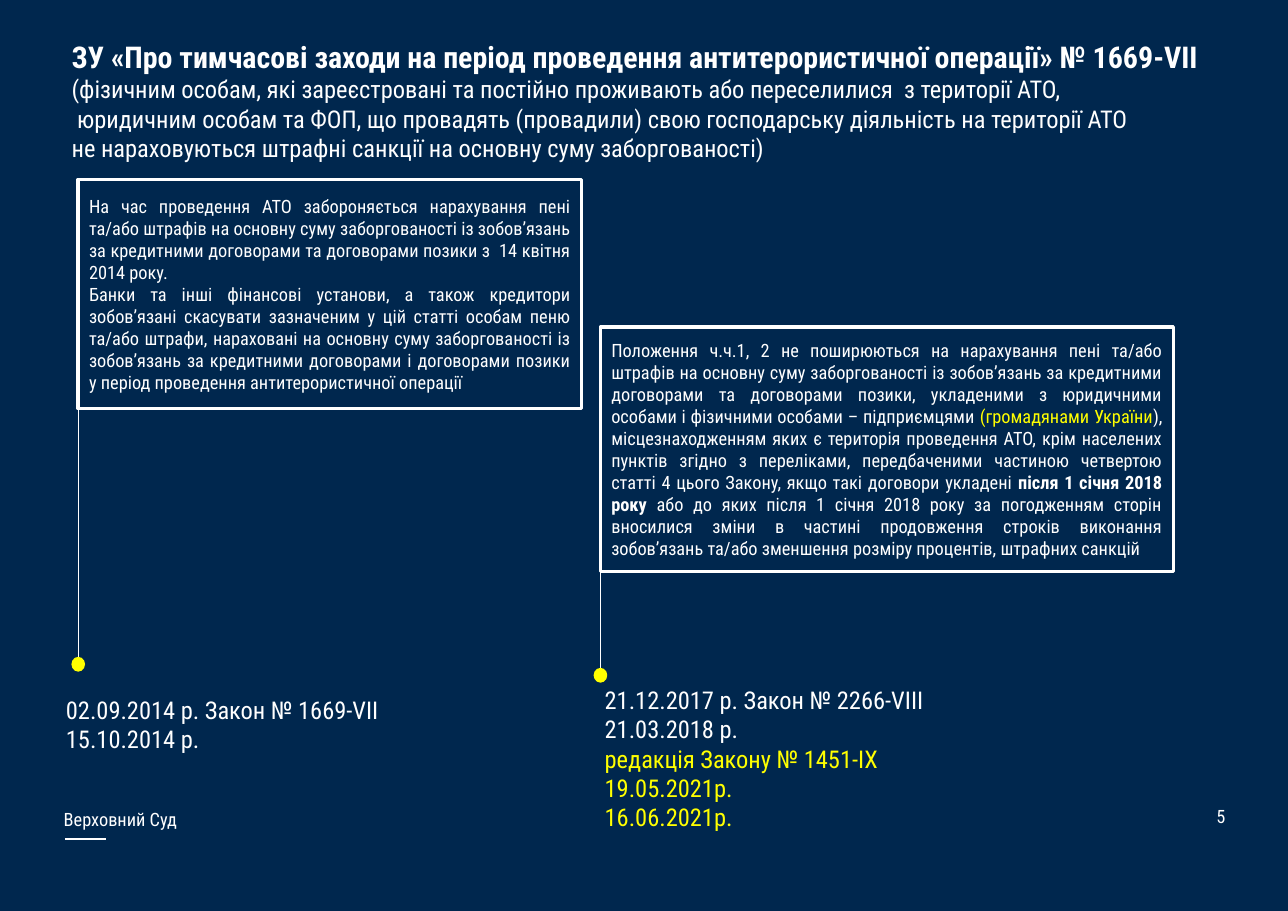
from dataclasses import dataclass

from pptx import Presentation
from pptx import util as u
from pptx.dml.color import RGBColor
from pptx.enum import shapes, text
from pptx.oxml.ns import qn


@dataclass(frozen=True)
class Theme:
    font: str = "Roboto Condensed"
    navy: RGBColor = RGBColor(0x00, 0x27, 0x4E)
    white: RGBColor = RGBColor(0xFF, 0xFF, 0xFF)
    yellow: RGBColor = RGBColor(0xFF, 0xFF, 0x00)
    heading: float = 19.6
    large: float = 16
    small: float = 12


T = Theme()
BOLD = {"bold": True}
YELLOW = {"color": T.yellow}
HEADING = {"bold": True, "size": T.heading}

# Each paragraph is a list of (text, format) runs.
TITLE = [
    [("ЗУ «Про тимчасові заходи на період проведення антитерористичної операції» № 1669-VII", HEADING)],
    [("(фізичним особам, які зареєстровані та постійно проживають або переселилися  з території АТО,", {})],
    [(" юридичним особам та ФОП, що провадять (провадили) свою господарську діяльність на території АТО", {})],
    [("не нараховуються штрафні санкції на основну суму заборгованості)", {})],
]
EVENTS = [
    {
        "box": (0.71, 1.63, 4.57, 2.08),
        "dot_y": 6.03,
        "date_at": (0.5, 6.26, 3.12, 0.64),
        "rule": [
            [("На час проведення АТО забороняється нарахування пені та/або штрафів на основну суму "
              "заборгованості із зобов’язань за кредитними договорами та договорами позики з  14 квітня "
              "2014 року.", {})],
            [("Банки та інші фінансові установи, а також кредитори зобов’язані скасувати зазначеним у цій "
              "статті особам пеню та/або штрафи, нараховані на основну суму заборгованості із зобов’язань "
              "за кредитними договорами і договорами позики у період проведення антитерористичної "
              "операції", {})],
        ],
        "dates": [
            [("02.09.2014 р. Закон № 1669-VII", {})],
            [("15.10.2014 р.", {})],
        ],
    },
    {
        "box": (5.45, 2.97, 5.2, 2.22),
        "dot_y": 6.13,
        "date_at": (5.39, 6.17, 3.39, 1.45),
        "rule": [
            [("Положення ч.ч.1, 2 не поширюються на нарахування пені та/або штрафів на основну суму "
              "заборгованості із зобов’язань за кредитними договорами та договорами позики, укладеними з "
              "юридичними особами і фізичними особами – підприємцями ", {}),
             ("(громадянами України", YELLOW),
             ("), місцезнаходженням яких є територія проведення АТО, крім населених пунктів згідно з "
              "переліками, передбаченими частиною четвертою статті 4 цього Закону, якщо такі договори "
              "укладені ", {}),
             ("після 1 січня 2018 року", BOLD),
             (" або до яких після 1 січня 2018 року за погодженням сторін вносилися зміни в частині "
              "продовження строків виконання зобов’язань та/або зменшення розміру процентів, штрафних "
              "санкцій", {})],
        ],
        "dates": [
            [("21.12.2017 р. Закон № 2266-VIII", {})],
            [("21.03.2018 р.", {})],
            [("редакція Закону № 1451-IX 19.05.2021р.", YELLOW)],
            [("16.06.2021р.", YELLOW)],
        ],
    },
]
COURT = [[("Верховний Суд", {})]]
PAGE = [[("5", {})]]
DOT_W, DOT_H = 0.11, 0.12


def inches(values):
    return [u.Inches(v) for v in values]


def write(sp, paragraphs, size, align=text.PP_ALIGN.LEFT, anchor=text.MSO_ANCHOR.TOP, spacing=1.0):
    tf = sp.text_frame
    frame = {"word_wrap": True, "auto_size": text.MSO_AUTO_SIZE.NONE, "vertical_anchor": anchor,
             "margin_left": u.Inches(0.1), "margin_right": u.Inches(0.1),
             "margin_top": u.Inches(0.05), "margin_bottom": u.Inches(0.05)}
    for name, value in frame.items():
        setattr(tf, name, value)
    for i, runs in enumerate(paragraphs):
        p = tf.add_paragraph() if i else tf.paragraphs[0]
        p.alignment, p.line_spacing = align, spacing
        for words, changes in runs:
            r = p.add_run()
            r.text = words
            look = {"name": T.font, "size": size, "bold": False, "color": T.white, **changes}
            r.font.color.rgb = look.pop("color")
            look["size"] = u.Pt(look["size"])
            for name, value in look.items():
                setattr(r.font, name, value)


def add_text(s, at, paragraphs, size, **layout):
    write(s.shapes.add_textbox(*inches(at)), paragraphs, size, **layout)


def add_shape(s, kind, at, fill, line, width):
    sp = s.shapes.add_shape(kind, *inches(at))
    sp.shadow.inherit = False
    sp.fill.solid()
    sp.fill.fore_color.rgb = fill
    sp.line.color.rgb = line
    sp.line.width = u.Pt(width)
    return sp


def add_line(s, ends, width):
    sp = s.shapes.add_connector(shapes.MSO_CONNECTOR.STRAIGHT, *inches(ends))
    sp.line.color.rgb = T.white
    sp.line.width = u.Pt(width)
    sp_pr = sp._element.spPr
    sp_pr.append(sp_pr.makeelement(qn("a:effectLst"), {}))


def add_event(s, event):
    """Draw a rule box with its stem, dot and dates."""
    left, top, width, height = event["box"]
    dot_y = event["dot_y"]
    box = add_shape(s, shapes.MSO_SHAPE.RECTANGLE, event["box"], T.navy, T.white, 2.25)
    write(box, event["rule"], T.small, align=text.PP_ALIGN.JUSTIFY, anchor=text.MSO_ANCHOR.MIDDLE)
    add_line(s, (left, top + height, left, dot_y), 0.75)
    dot = (left - DOT_W / 2, dot_y - DOT_H / 2, DOT_W, DOT_H)
    add_shape(s, shapes.MSO_SHAPE.OVAL, dot, T.yellow, T.yellow, 1)
    add_text(s, event["date_at"], event["dates"], T.large)


def main():
    prs = Presentation()
    prs.slide_width, prs.slide_height = inches((11.69, 8.27))
    s = prs.slides.add_slide(prs.slide_layouts[5])
    s.background.fill.solid()
    s.background.fill.fore_color.rgb = T.navy

    title = s.shapes.title
    title.left, title.top, title.width, title.height = inches((0.55, 0.3, 10.46, 1.24))
    write(title, TITLE, T.large)
    for event in EVENTS:
        add_event(s, event)

    middle = text.MSO_ANCHOR.MIDDLE
    add_line(s, (0.59, 7.62, 0.96, 7.62), 1.12)
    add_text(s, (0.48, 7.2, 1.27, 0.44), COURT, T.small, anchor=middle, spacing=1.14)
    add_text(s, (8.59, 7.19, 2.63, 0.44), PAGE, T.small, align=text.PP_ALIGN.RIGHT, anchor=middle)
    prs.save("out.pptx")


if __name__ == "__main__":
    main()
